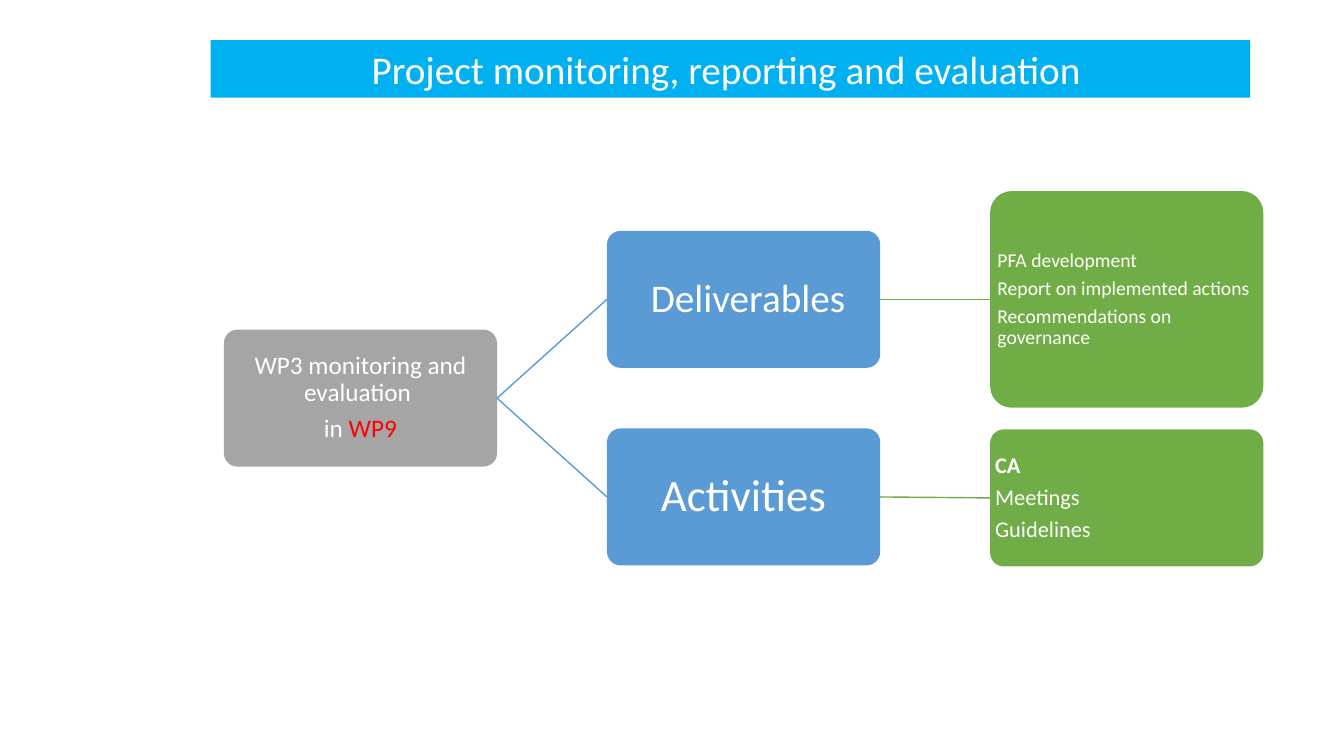
from lxml import etree
from pptx import Presentation
from pptx.dml.color import RGBColor
from pptx.enum.shapes import MSO_CONNECTOR, MSO_SHAPE
from pptx.enum.text import MSO_ANCHOR, PP_ALIGN
from pptx.oxml.ns import qn
from pptx.util import Inches, Pt

RECTANGLE = MSO_SHAPE.RECTANGLE
ROUNDED = MSO_SHAPE.ROUNDED_RECTANGLE
STRAIGHT = MSO_CONNECTOR.STRAIGHT
TOP, MIDDLE = MSO_ANCHOR.TOP, MSO_ANCHOR.MIDDLE
LEFT, CENTER = PP_ALIGN.LEFT, PP_ALIGN.CENTER
LEFT_SITE, RIGHT_SITE = 1, 3

WHITE = RGBColor(0xFF, 0xFF, 0xFF)
RED = RGBColor(0xFF, 0x00, 0x00)
SKY = RGBColor(0x00, 0xB0, 0xF0)
GRAY = RGBColor(0xA5, 0xA5, 0xA5)
BLUE = RGBColor(0x5B, 0x9B, 0xD5)
GREEN = RGBColor(0x70, 0xAD, 0x47)

SLIDE_WIDTH, SLIDE_HEIGHT = 13.33, 7.5
FIRST_COLUMN, COLUMN_STEP = 2.22, 3.8
FIRST_ROW, ROW_STEP = 2.97, 0.98
NODE_WIDTH, NODE_HEIGHT = 2.71, 1.36


def apply(target, values):
    for name, value in values.items():
        setattr(target, name, value)


class Diagram:
    font_name = "Calibri"

    def __init__(self, page):
        self.page = page

    def block(self, kind, area, color):
        box = self.page.shapes.add_shape(kind, *(Inches(length) for length in area))
        box.shadow.inherit = False
        box.fill.solid()
        box.fill.fore_color.rgb = color
        box.line.fill.background()
        return box

    def add_text(self, box, paragraphs, size, align, spacing):
        frame = box.text_frame
        for index, spans in enumerate(paragraphs):
            para = frame.add_paragraph() if index else frame.paragraphs[0]
            apply(para, {"alignment": align, **spacing})
            for text, color, bold in spans:
                span = para.add_run()
                span.text = text
                apply(span.font, {"name": self.font_name, "size": Pt(size), "bold": bold})
                span.font.color.rgb = color

    def banner(self, text, left, top, width, height, size):
        area = (left * SLIDE_WIDTH / 100, top * SLIDE_HEIGHT / 100,
                width * SLIDE_WIDTH / 100, height * SLIDE_HEIGHT / 100)
        box = self.block(RECTANGLE, area, SKY)
        apply(box.text_frame, {"word_wrap": True, "vertical_anchor": TOP})
        self.add_text(box, [[(text, WHITE, False)]], size, CENTER, {})

    def node(self, column, row, color, size, paragraphs,
             align=CENTER, height=NODE_HEIGHT, inset=0.01):
        left = FIRST_COLUMN + column * COLUMN_STEP
        top = FIRST_ROW + row * ROW_STEP - height / 2
        box = self.block(ROUNDED, (left, top, NODE_WIDTH, height), color)
        box.adjustments[0] = 0.1
        margins = {f"margin_{side}": Inches(inset)
                   for side in ("left", "top", "right", "bottom")}
        apply(box.text_frame, {"word_wrap": True, "vertical_anchor": MIDDLE, **margins})
        spacing = {"line_spacing": 0.9, "space_after": Pt(0.35 * size)}
        self.add_text(box, paragraphs, size, align, spacing)
        return box

    def link(self, start, end, color):
        line = self.page.shapes.add_connector(STRAIGHT, 0, 0, 0, 0)
        line.begin_connect(start, RIGHT_SITE)
        line.end_connect(end, LEFT_SITE)
        line.line.color.rgb = color
        line.line.width = Pt(1)
        etree.SubElement(line._element.spPr, qn("a:effectLst"))


def plain(*texts):
    return [[(text, WHITE, False)] for text in texts]


def main():
    deck = Presentation()
    apply(deck, {"slide_width": Inches(SLIDE_WIDTH), "slide_height": Inches(SLIDE_HEIGHT)})
    diagram = Diagram(deck.slides.add_slide(deck.slide_layouts[6]))

    diagram.banner("Project monitoring, reporting and evaluation ",
                   15.68, 5.33, 77.34, 7.6, 28)

    package_node = diagram.node(0, 1, GRAY, 18, [
        *plain("WP3 monitoring and evaluation "),
        [("in ", WHITE, False), ("WP9", RED, False)],
    ])
    deliverables = diagram.node(1, 0, BLUE, 28, plain(" Deliverables"), inset=0.02)
    activities = diagram.node(1, 2, BLUE, 32, plain("Activities"), inset=0.02)
    outputs = diagram.node(2, 0, GREEN, 14, plain(
        "PFA development",
        "Report on implemented actions",
        "Recommendations on governance",
    ), align=LEFT, height=2.15)
    actions = diagram.node(2, 2.01, GREEN, 16, [
        [("CA", WHITE, True)],
        *plain("Meetings", "Guidelines"),
    ], align=LEFT)

    for start, end, color in (
        (package_node, deliverables, BLUE),
        (package_node, activities, BLUE),
        (deliverables, outputs, GREEN),
        (activities, actions, GREEN),
    ):
        diagram.link(start, end, color)

    deck.save("out.pptx")


if __name__ == "__main__":
    main()
